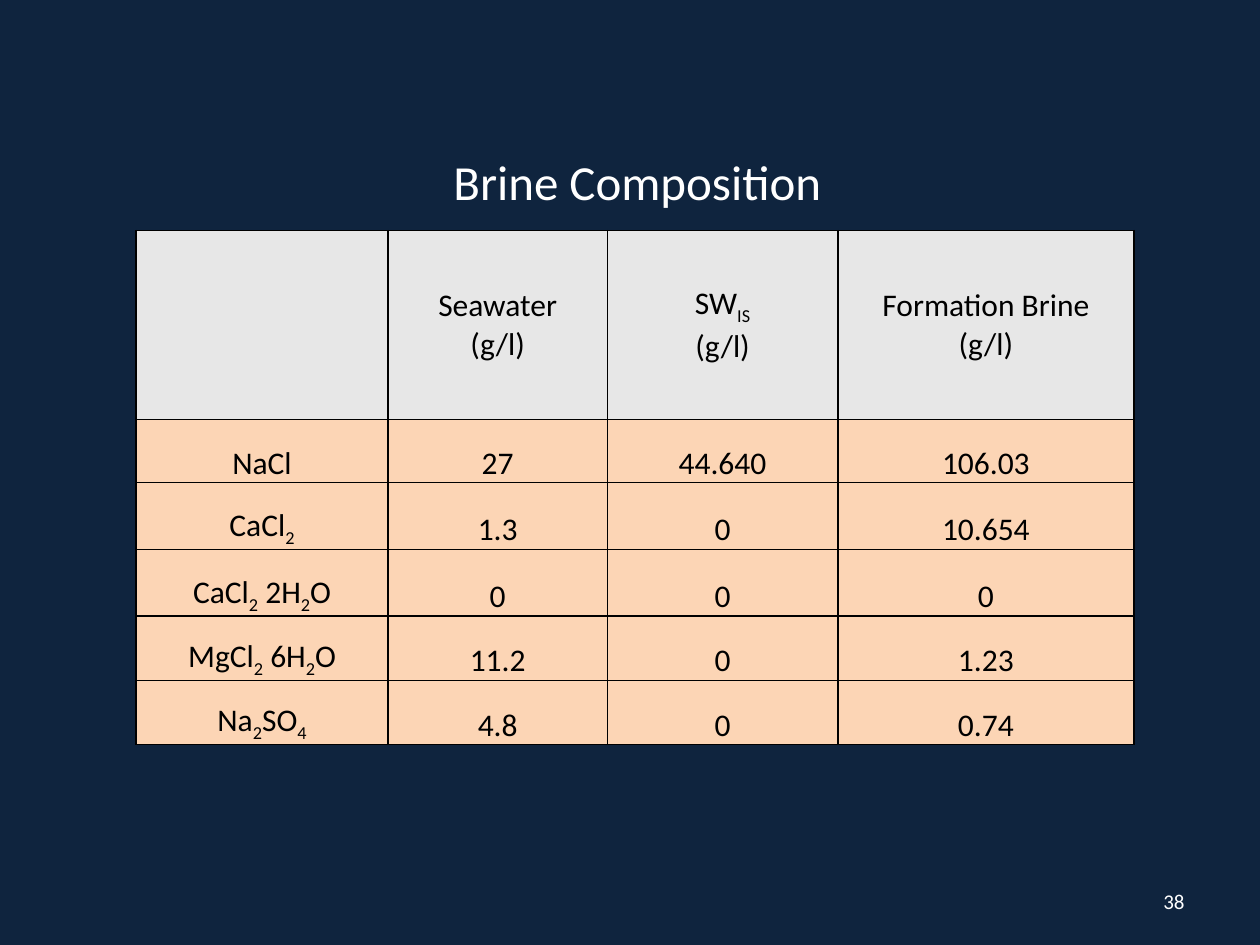
from dataclasses import dataclass

from lxml.etree import SubElement
from pptx import Presentation
from pptx.dml.color import RGBColor
from pptx.enum.text import MSO_ANCHOR, PP_ALIGN
from pptx.oxml.ns import qn
from pptx.util import Inches, Pt


@dataclass(frozen=True)
class Theme:
    """Colours, font and type sizes of the slide."""
    back: str = "0F243E"
    light: str = "FFFFFF"
    ink: str = "000000"
    head: str = "E7E7E7"
    body: str = "FCD5B5"
    font: str = "Calibri"
    title: int = 28
    cell: int = 18
    foot: int = 12
    rule: int = 1


class Sheet:
    """Draws on one slide, measured on a grid of 100 columns by 75 rows."""

    def __init__(self, deck, theme):
        """Add a blank slide with the theme's background."""
        self.theme = theme
        self.unit = deck.slide_width / 100
        self.slide = deck.slides.add_slide(deck.slide_layouts[6])
        fill = self.slide.background.fill
        fill.solid()
        fill.fore_color.rgb = RGBColor.from_string(theme.back)

    def span(self, *cells):
        """Turn grid counts into lengths."""
        return [round(cell * self.unit) for cell in cells]

    def style(self, run, size, tint):
        """Set the font of a run."""
        font = run.font
        font.name, font.size = self.theme.font, Pt(size)
        font.color.rgb = RGBColor.from_string(tint)

    def label(self, text, box, size, align=PP_ALIGN.LEFT,
              anchor=MSO_ANCHOR.TOP, wrap=True):
        """Place a line of light text."""
        frame = self.slide.shapes.add_textbox(*self.span(*box)).text_frame
        frame.text = text
        frame.word_wrap, frame.vertical_anchor = wrap, anchor
        line = frame.paragraphs[0]
        line.alignment = align
        self.style(line.runs[0], size, self.theme.light)

    def entry(self, line, text):
        """Set centred text, with subscripts held between underscores."""
        line.alignment = PP_ALIGN.CENTER
        for i, part in enumerate(text.split("_")):
            if part:
                run = line.add_run()
                run.text = part
                self.style(run, self.theme.cell, self.theme.ink)
                if i % 2:
                    run._r.get_or_add_rPr().set("baseline", "-25000")

    def border(self, cell):
        """Rule all four sides of a cell."""
        props = cell._tc.get_or_add_tcPr()
        for side in ("a:lnL", "a:lnR", "a:lnT", "a:lnB"):
            edge = SubElement(props, qn(side), w=str(Pt(self.theme.rule)))
            fill = SubElement(edge, qn("a:solidFill"))
            SubElement(fill, qn("a:srgbClr"), val=self.theme.ink)

    def cell(self, cell, text, tint, anchor):
        """Fill one table cell."""
        cell.margin_left = cell.margin_right = 0
        cell.margin_top = cell.margin_bottom = 0
        cell.vertical_anchor = anchor
        self.border(cell)
        cell.fill.solid()
        cell.fill.fore_color.rgb = RGBColor.from_string(tint)
        frame = cell.text_frame
        for i, part in enumerate(text.split("\n")):
            line = frame.add_paragraph() if i else frame.paragraphs[0]
            self.entry(line, part)

    def table(self, data, left, top, cols, rows):
        """Place a table with a heading row."""
        box = self.span(left, top, sum(cols), sum(rows))
        table = self.slide.shapes.add_table(len(rows), len(cols), *box).table
        table.first_row = table.horz_banding = False
        for col, width in zip(table.columns, self.span(*cols)):
            col.width = width
        for row, height in zip(table.rows, self.span(*rows)):
            row.height = height
        for i, texts in enumerate(data):
            tint = self.theme.body if i else self.theme.head
            anchor = MSO_ANCHOR.BOTTOM if i else MSO_ANCHOR.MIDDLE
            for j, text in enumerate(texts):
                self.cell(table.cell(i, j), text, tint, anchor)


BRINES = [
    ("", "Seawater\n(g/l)", "SW_IS_\n(g/l)", "Formation Brine\n(g/l)"),
    ("NaCl", "27", "44.640", "106.03"),
    ("CaCl_2_", "1.3", "0", "10.654"),
    ("CaCl_2_ 2H_2_O", "0", "0", "0"),
    ("MgCl_2_ 6H_2_O", "11.2", "0", "1.23"),
    ("Na_2_SO_4_", "4.8", "0", "0.74"),
]


def main():
    """Build the brine slide."""
    deck = Presentation()
    deck.slide_width, deck.slide_height = Inches(10), Inches(7.5)
    theme = Theme()
    sheet = Sheet(deck, theme)
    sheet.label("38", (71.7, 69.5, 23.3, 4), theme.foot,
                PP_ALIGN.RIGHT, MSO_ANCHOR.MIDDLE)
    sheet.table(BRINES, 10.8, 18.3, (20, 17.4, 18.3, 23.5),
                (15, 5, 5.3, 5.3, 5.1, 5.1))
    sheet.label("Brine Composition", (35, 11.5, 31.5, 5.7), theme.title,
                wrap=False)
    deck.save("out.pptx")


if __name__ == "__main__":
    main()
